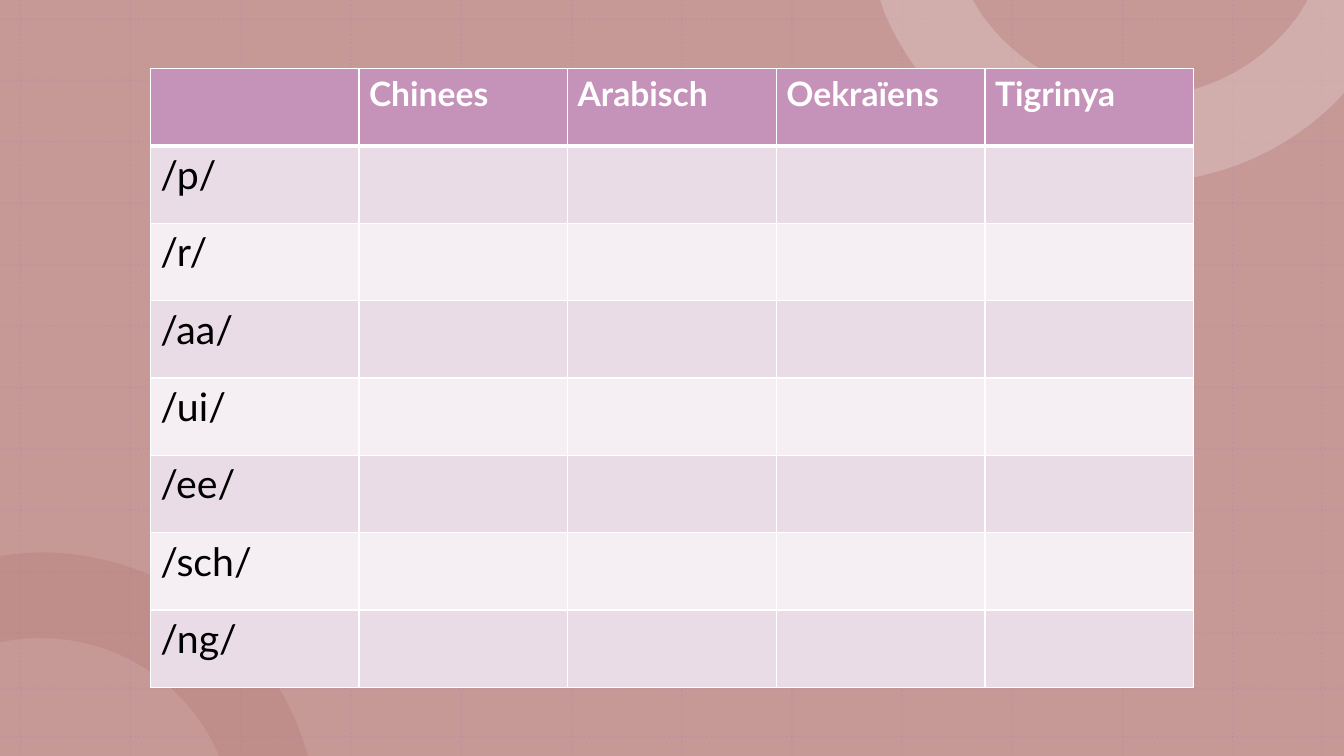
from dataclasses import dataclass

from lxml import etree
from pptx import Presentation
from pptx.dml.color import RGBColor
from pptx.enum.dml import MSO_LINE
from pptx.enum.shapes import MSO_CONNECTOR, MSO_SHAPE
from pptx.oxml.ns import qn
from pptx.util import Inches, Pt

RECTANGLE = MSO_SHAPE.RECTANGLE
STRAIGHT = MSO_CONNECTOR.STRAIGHT
DOTTED = MSO_LINE.ROUND_DOT

LANGUAGES = ["", "Chinees", "Arabisch", "Oekraïens", "Tigrinya"]
SOUNDS = ["/p/", "/r/", "/aa/", "/ui/", "/ee/", "/sch/", "/ng/"]

LOWER_RING = [
    (0.4, 5.48), (1.64, 5.48, 2.69, 6.3, 3.03, 7.42), (3.06, 7.5), (2.17, 7.5),
    (2.17, 7.49), (1.88, 6.81, 1.2, 6.33, 0.4, 6.33),
    (0.27, 6.33, 0.14, 6.34, 0.02, 6.37), (-0.01, 6.37), (-0.01, 5.52),
    (0.12, 5.5), (0.21, 5.49, 0.31, 5.48, 0.4, 5.48),
]
UPPER_RING = [
    (8.73, 0), (9.65, 0), (9.72, 0.12), (10.07, 0.63, 10.65, 0.96, 11.31, 0.96),
    (11.97, 0.96, 12.55, 0.63, 12.9, 0.12), (12.97, 0), (13.33, 0),
    (13.33, 0.92), (13.26, 1), (12.76, 1.5, 12.07, 1.81, 11.31, 1.81),
    (10.17, 1.81, 9.19, 1.11, 8.77, 0.12),
]


@dataclass(frozen=True)
class Theme:
    font: str = "Lato"
    header_size: int = 24
    sound_size: int = 28
    backdrop: str = "C69996"
    grid: str = "AF7FBA"
    lower_ring: str = "A7625E"
    upper_ring: str = "DDC2C0"
    header: str = "C593B9"
    bands: tuple = ("EADCE6", "F5EEF3")
    white: str = "FFFFFF"
    black: str = "000000"


THEME = Theme()
WIDTH, HEIGHT = 13.33, 7.5
TABLE_LEFT, TABLE_TOP, TABLE_WIDTH, TABLE_HEIGHT = 1.49, 0.68, 10.35, 6.14

GRID_X = [0.2 + 12.03 / 11 * step for step in range(12)] + [13.11]
GRID_Y = [0.19 + 6.09 / 10 * step for step in range(11)] + [6.83, 7.31]


def set_opacity(shape, percent):
    for color in shape.element.iter(qn("a:srgbClr")):
        etree.SubElement(color, qn("a:alpha"), val=str(percent * 1000))


def paint(shape, color):
    shape.shadow.inherit = False
    shape.fill.solid()
    shape.fill.fore_color.rgb = RGBColor.from_string(color)
    shape.line.fill.background()


def add_grid_line(grid, x1, y1, x2, y2):
    line = grid.shapes.add_connector(STRAIGHT, *map(Inches, (x1, y1, x2, y2)))
    line.line.color.rgb = RGBColor.from_string(THEME.grid)
    line.line.width = Pt(1.5)
    line.line.dash_style = DOTTED
    set_opacity(line, 20)
    etree.SubElement(line.element.spPr, qn("a:effectLst"))


def add_grid(page):
    grid = page.shapes.add_group_shape()
    for x in GRID_X:
        add_grid_line(grid, x, 0, x, HEIGHT)
    for y in GRID_Y:
        add_grid_line(grid, -0.01, y, WIDTH, y)
    return grid


def add_ring(page, outline, color, opacity):
    ends = [tuple(map(Inches, segment[-2:])) for segment in outline]
    builder = page.shapes.build_freeform(*ends[0])
    builder.add_line_segments(ends[1:], close=True)
    ring = builder.convert_to_shape()
    lines = list(ring.element.iter(qn("a:lnTo")))
    for line, segment in zip(lines, outline[1:]):
        if len(segment) == 2:
            continue
        curve = etree.Element(qn("a:cubicBezTo"))
        for x, y in zip(segment[::2], segment[1::2]):
            etree.SubElement(curve, qn("a:pt"),
                             x=str(Inches(x) - ring.left), y=str(Inches(y) - ring.top))
        line.getparent().replace(line, curve)
    paint(ring, color)
    set_opacity(ring, opacity)
    return ring


def add_backdrop(page):
    backdrop = page.shapes.add_shape(RECTANGLE, 0, 0, Inches(WIDTH), Inches(HEIGHT))
    paint(backdrop, THEME.backdrop)
    return backdrop


def add_decoration(page):
    parts = [
        add_backdrop(page),
        add_grid(page),
        add_ring(page, LOWER_RING, THEME.lower_ring, 20),
        add_ring(page, UPPER_RING, THEME.upper_ring, 50),
    ]
    layout_tree = page.slide_layout.shapes.element
    for part in parts:
        layout_tree.append(part.element)


def add_borders(cell, top, bottom):
    properties = cell._tc.get_or_add_tcPr()
    for side, points in (("L", 1), ("R", 1), ("T", top), ("B", bottom)):
        border = etree.SubElement(properties, qn(f"a:ln{side}"), w=str(Pt(points)))
        fill = etree.SubElement(border, qn("a:solidFill"))
        etree.SubElement(fill, qn("a:srgbClr"), val=THEME.white)


def style_cell(cell, row):
    is_header = row == 0
    add_borders(cell, 3 if row == 1 else 1, 3 if is_header else 1)
    cell.fill.solid()
    color = THEME.header if is_header else THEME.bands[(row - 1) % 2]
    cell.fill.fore_color.rgb = RGBColor.from_string(color)
    for span in cell.text_frame.paragraphs[0].runs:
        span.font.name = THEME.font
        span.font.size = Pt(THEME.header_size if is_header else THEME.sound_size)
        span.font.bold = is_header
        span.font.color.rgb = RGBColor.from_string(
            THEME.white if is_header else THEME.black)


def add_sound_table(page):
    rows = [LANGUAGES] + [[sound] + [""] * (len(LANGUAGES) - 1) for sound in SOUNDS]
    frame = page.shapes.add_table(
        len(rows), len(LANGUAGES),
        *map(Inches, (TABLE_LEFT, TABLE_TOP, TABLE_WIDTH, TABLE_HEIGHT)))
    table = frame.table
    for column in table.columns:
        column.width = Inches(TABLE_WIDTH / len(LANGUAGES))
    for row, texts in enumerate(rows):
        table.rows[row].height = Inches(TABLE_HEIGHT / len(rows))
        for column, text in enumerate(texts):
            cell = table.cell(row, column)
            if text:
                cell.text_frame.text = text
            style_cell(cell, row)


def main():
    deck = Presentation()
    deck.slide_width, deck.slide_height = Inches(WIDTH), Inches(HEIGHT)
    page = deck.slides.add_slide(deck.slide_layouts[6])
    add_decoration(page)
    add_sound_table(page)
    deck.save("out.pptx")


if __name__ == "__main__":
    main()
